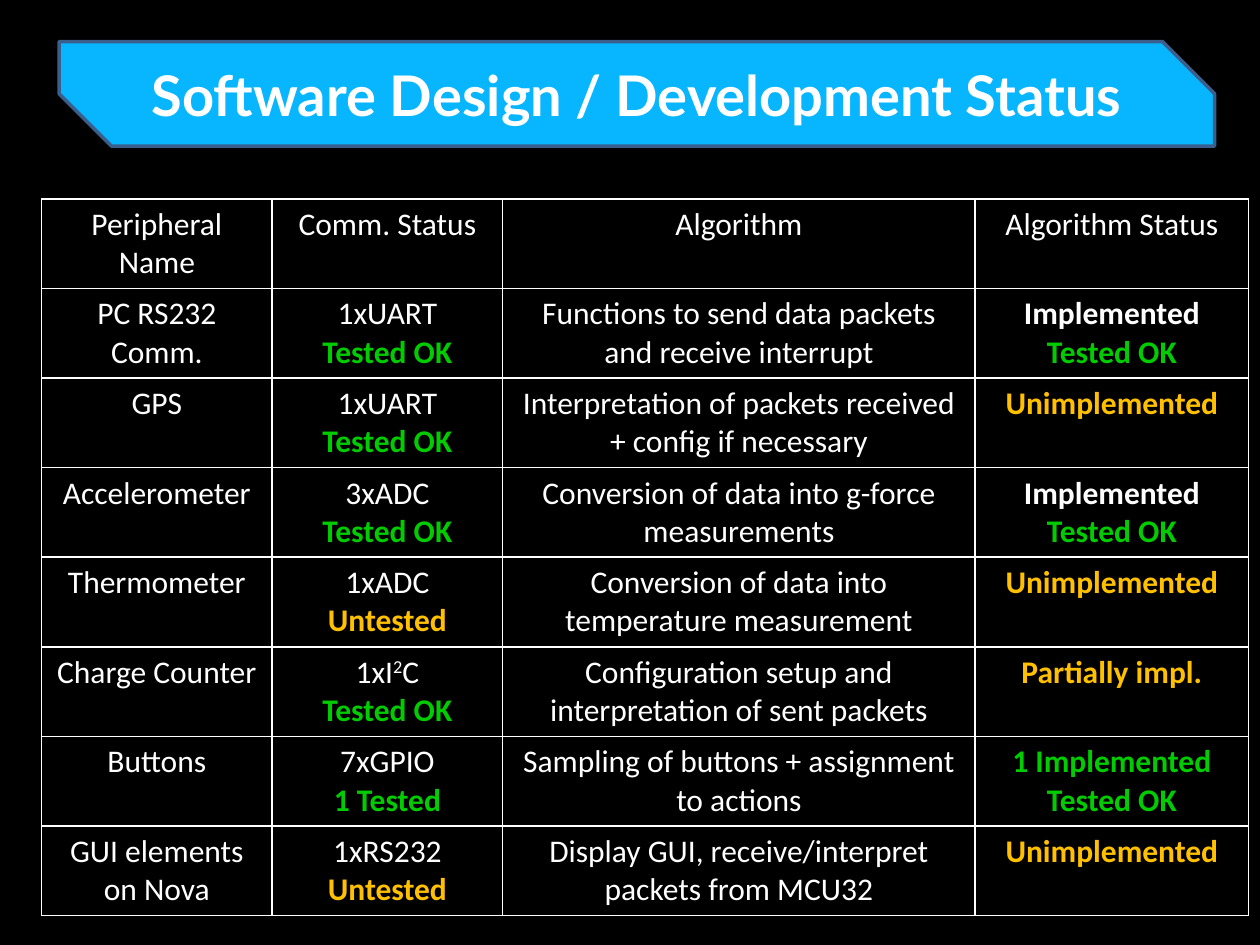
from pptx import Presentation
from pptx.dml.color import RGBColor
from pptx.enum.shapes import MSO_SHAPE
from pptx.enum.text import MSO_ANCHOR, PP_ALIGN
from pptx.oxml import parse_xml
from pptx.oxml.ns import nsdecls
from pptx.util import Inches, Pt

SNIP = MSO_SHAPE.SNIP_2_DIAG_RECTANGLE
MIDDLE = MSO_ANCHOR.MIDDLE
CENTER = PP_ALIGN.CENTER

BLACK = RGBColor(0x00, 0x00, 0x00)
WHITE = RGBColor(0xFF, 0xFF, 0xFF)
GREEN = RGBColor(0x00, 0xCC, 0x00)
AMBER = RGBColor(0xFF, 0xC0, 0x00)
BLUE = RGBColor(0x07, 0xB6, 0xFE)
NAVY = RGBColor(0x3A, 0x5F, 0x8C)

TITLE = "Software Design / Development Status"
# In a cell, \n starts a paragraph, \v breaks a line and ^ raises the next letter.
ROWS = [
    ("Peripheral Name", "Comm. Status", "Algorithm", "Algorithm Status"),
    ("PC RS232 Comm.", "1xUART\vTested OK",
     "Functions to send data packets and receive interrupt",
     "Implemented\vTested OK"),
    ("GPS", "1xUART\vTested OK",
     "Interpretation of packets received + config if necessary",
     "Unimplemented"),
    ("Accelerometer", "3xADC\vTested OK",
     "Conversion of data into g-force measurements",
     "Implemented\vTested OK"),
    ("Thermometer", "1xADC\vUntested",
     "Conversion of data into temperature measurement", "Unimplemented"),
    ("Charge Counter", "1xI^2C\nTested OK",
     "Configuration setup and interpretation of sent packets",
     "Partially impl."),
    ("Buttons", "7xGPIO\v1 Tested",
     "Sampling of buttons + assignment to actions",
     "1 Implemented\nTested OK"),
    ("GUI elements on Nova", "1xRS232\vUntested",
     "Display GUI, receive/interpret packets from MCU32", "Unimplemented"),
]
STATUS = {
    "Implemented": WHITE,
    "Tested OK": GREEN,
    "1 Tested": GREEN,
    "1 Implemented": GREEN,
    "Untested": AMBER,
    "Unimplemented": AMBER,
    "Partially impl.": AMBER,
}
WIDTHS = [1.83, 1.83, 3.75, 2.17]
ROW_H = 0.71


def add_run(para, text, line):
    run = para.add_run()
    run.text = text
    run.font.bold = line in STATUS
    run.font.color.rgb = STATUS.get(line, WHITE)
    return run


def add_line(para, line):
    head, mark, tail = line.partition("^")
    add_run(para, head, line)
    if mark:
        power = add_run(para, tail[0], line)
        power._r.get_or_add_rPr().set("baseline", "30000")
        add_run(para, tail[1:], line)


def fill_text(cell, text):
    frame = cell.text_frame
    for i, block in enumerate(text.split("\n")):
        para = frame.add_paragraph() if i else frame.paragraphs[0]
        para.alignment = CENTER
        para.font.size = Pt(18)
        para.font.name = "Calibri"
        for j, line in enumerate(block.split("\v")):
            if j:
                para.add_line_break()
            add_line(para, line)


def add_border(cell):
    props = cell._tc.get_or_add_tcPr()
    for i, side in enumerate("LRTB"):
        props.insert(i, parse_xml(
            f'<a:ln{side} {nsdecls("a")} w="{Pt(1)}"><a:solidFill>'
            f'<a:srgbClr val="{WHITE}"/></a:solidFill></a:ln{side}>'))


def add_title(slide):
    box = slide.shapes.add_shape(
        SNIP, Inches(0.47), Inches(0.33), Inches(9.17), Inches(0.83))
    box.adjustments[0] = 0
    box.adjustments[1] = 0.5
    box.shadow.inherit = False
    box.fill.solid()
    box.fill.fore_color.rgb = BLUE
    box.line.color.rgb = NAVY
    box.line.width = Pt(2)
    frame = box.text_frame
    frame.word_wrap = True
    frame.vertical_anchor = MIDDLE
    para = frame.paragraphs[0]
    para.text = TITLE
    para.alignment = CENTER
    font = para.font
    font.name, font.size, font.bold = "Lato", Pt(32), True
    font.color.rgb = WHITE


def add_grid(slide):
    table = slide.shapes.add_table(
        len(ROWS), len(WIDTHS), Inches(0.33), Inches(1.58),
        Inches(sum(WIDTHS)), Inches(ROW_H * len(ROWS))).table
    for col, width in zip(table.columns, WIDTHS):
        col.width = Inches(width)
    for row, texts in zip(table.rows, ROWS):
        row.height = Inches(ROW_H)
        for cell, text in zip(row.cells, texts):
            cell.fill.solid()
            cell.fill.fore_color.rgb = BLACK
            add_border(cell)
            fill_text(cell, text)


def main():
    deck = Presentation()
    deck.slide_width, deck.slide_height = Inches(10), Inches(7.5)
    slide = deck.slides.add_slide(deck.slide_layouts[6])
    slide.background.fill.solid()
    slide.background.fill.fore_color.rgb = BLACK
    add_title(slide)
    add_grid(slide)
    deck.save("out.pptx")


if __name__ == "__main__":
    main()
